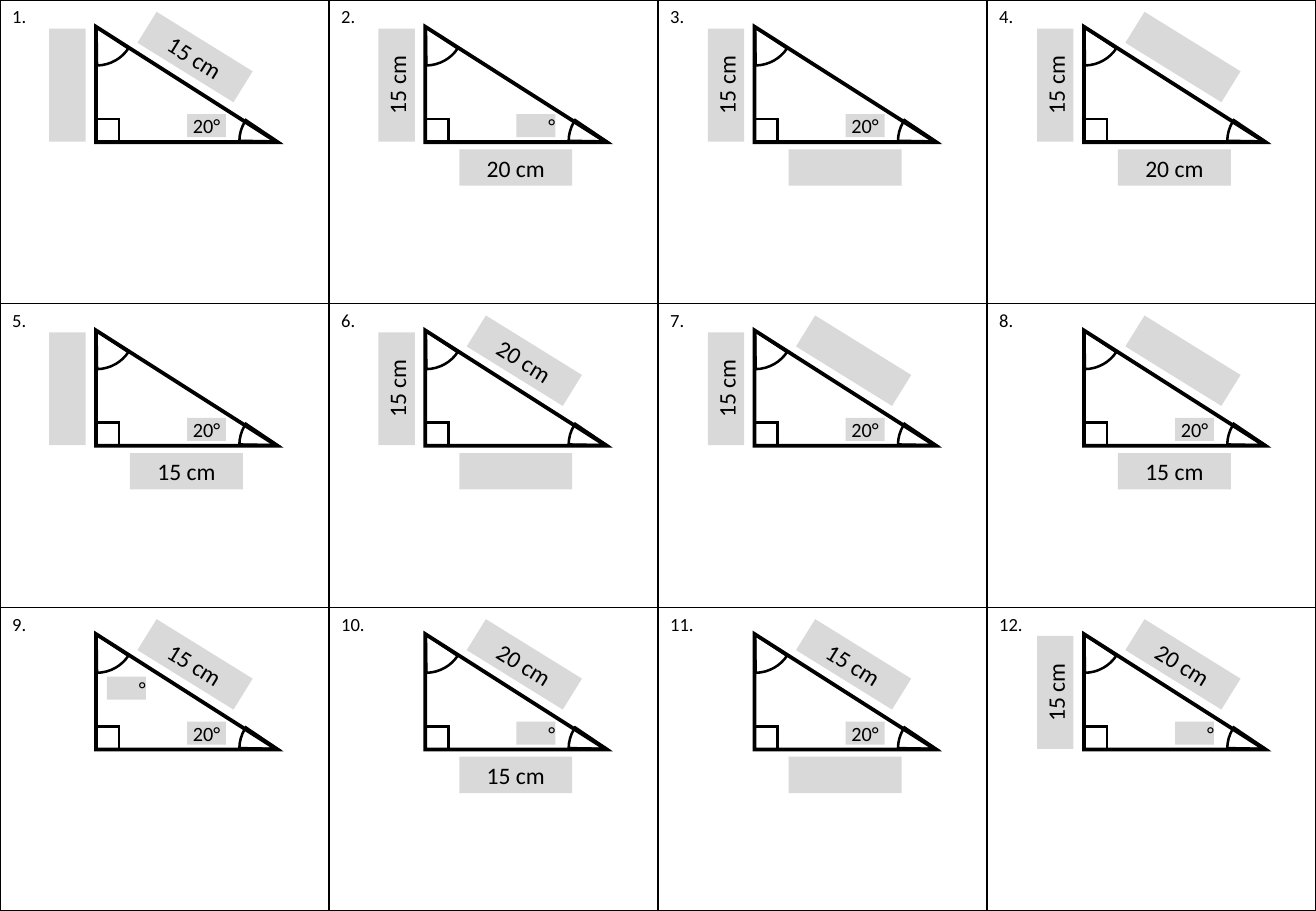
"""Worksheet of twelve right-angled triangles with sides and angles to find."""
from lxml.etree import SubElement
from pptx import Presentation
from pptx.dml.color import RGBColor
from pptx.enum.shapes import MSO_SHAPE as Shape
from pptx.enum.text import MSO_ANCHOR as Anchor, PP_ALIGN as Align
from pptx.oxml.ns import qn
from pptx.util import Inches, Pt

BLACK = RGBColor(0x00, 0x00, 0x00)
LABEL_GREY = RGBColor(0xD9, 0xD9, 0xD9)
FONT = "Calibri"
WIDTH, HEIGHT = 10.83, 7.5
COLUMNS, ROWS = 4, 3
COLUMN_STEP, ROW_STEP = 2.71, 2.5
TRIANGLE_LEFT, TRIANGLE_TOP = 0.79, 0.22

OUTLINES = [
    (Shape.RIGHT_TRIANGLE, (0, 0, 1.49, 0.95), 2.25, ()),
    (Shape.RECTANGLE, (0, 0.76, 0.19, 0.19), 1.5, ()),
    (Shape.PIE, (1.18, 0.63, 0.63, 0.63), 1.5, (108.57, 128.35)),
    (Shape.PIE, (-0.31, -0.31, 0.63, 0.63), 1.5, (20.21, 53.52)),
]
LABELS = {
    "base": ((0.28, 1.01, 0.93, 0.3), 0, 14),
    "slope": ((0.35, 0.1, 0.93, 0.3), 31.8, 14),
    "upright": ((-0.7, 0.33, 0.93, 0.3), 270, 14),
    "right_angle": ((0.75, 0.72, 0.32, 0.19), 0, 12),
    "top_angle": ((0.09, 0.35, 0.32, 0.19), 0, 12),
}
QUESTIONS = [
    dict(slope="15 cm", upright="", right_angle="20°"),
    dict(base="20 cm", upright="15 cm", right_angle="°"),
    dict(base="", upright="15 cm", right_angle="20°"),
    dict(base="20 cm", slope="", upright="15 cm"),
    dict(base="15 cm", upright="", right_angle="20°"),
    dict(base="", slope="20 cm", upright="15 cm"),
    dict(slope="", upright="15 cm", right_angle="20°"),
    dict(base="15 cm", slope="", right_angle="20°"),
    dict(slope="15 cm", right_angle="20°", top_angle="°"),
    dict(base="15 cm", slope="20 cm", right_angle="°"),
    dict(base="", slope="15 cm", right_angle="20°"),
    dict(slope="20 cm", upright="15 cm", right_angle="°"),
]


def write(frame, text, size=14, align=Align.CENTER):
    """Put one formatted line of text into a text frame."""
    paragraph = frame.paragraphs[0]
    paragraph.alignment = align
    run = paragraph.add_run()
    run.text = text
    run.font.name = FONT
    run.font.size = Pt(size)
    run.font.bold = False
    run.font.color.rgb = BLACK


def place(group, kind, box, left, top):
    """Add a shadowless shape whose box is measured from the triangle corner."""
    x, y, width, height = box
    shape = group.shapes.add_shape(
        kind, Inches(left + x), Inches(top + y), Inches(width), Inches(height))
    shape.shadow.inherit = False
    return shape


presentation = Presentation()
presentation.slide_width = Inches(WIDTH)
presentation.slide_height = Inches(HEIGHT)
slide = presentation.slides.add_slide(presentation.slide_layouts[6])

table = slide.shapes.add_table(
    ROWS, COLUMNS, 0, 0, Inches(WIDTH), Inches(HEIGHT)).table
table.first_row = False
table.horz_banding = False
for number, cell in enumerate(table.iter_cells(), start=1):
    write(cell.text_frame, f"{number}.", size=11, align=Align.LEFT)
    properties = cell._tc.get_or_add_tcPr()
    for side in ("a:lnL", "a:lnR", "a:lnT", "a:lnB"):
        border = SubElement(properties, qn(side), w=str(Pt(1)))
        fill = SubElement(border, qn("a:solidFill"))
        SubElement(fill, qn("a:srgbClr"), val=str(BLACK))
    cell.fill.background()

for index, labels in enumerate(QUESTIONS):
    row, column = divmod(index, COLUMNS)
    left = TRIANGLE_LEFT + column * COLUMN_STEP
    top = TRIANGLE_TOP + row * ROW_STEP
    group = slide.shapes.add_group_shape()

    for kind, box, weight, angles in OUTLINES:
        outline = place(group, kind, box, left, top)
        for position, angle in enumerate(angles):
            outline.adjustments[position] = angle
        outline.fill.background()
        outline.line.color.rgb = BLACK
        outline.line.width = Pt(weight)
        SubElement(outline.line._get_or_add_ln(), qn("a:miter"), lim="800000")

    for name, text in labels.items():
        box, rotation, size = LABELS[name]
        label = place(group, Shape.RECTANGLE, box, left, top)
        label.rotation = rotation
        label.fill.solid()
        label.fill.fore_color.rgb = LABEL_GREY
        label.line.fill.background()
        frame = label.text_frame
        frame.vertical_anchor = Anchor.MIDDLE
        if name.endswith("angle"):
            frame.margin_left = frame.margin_right = 0
        if text:
            write(frame, text, size=size,
                  align=Align.RIGHT if text == "°" else Align.CENTER)

presentation.save("out.pptx")
